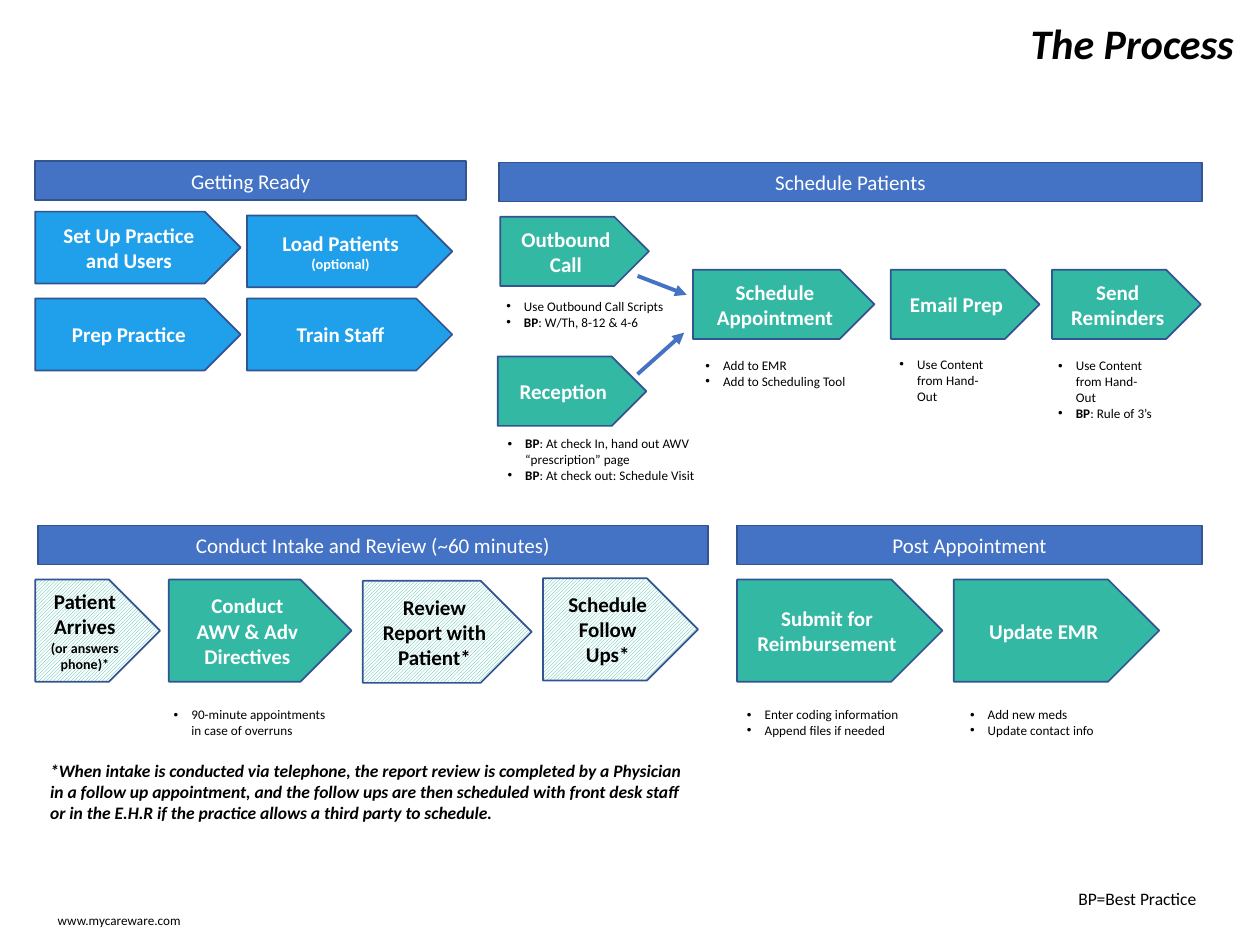
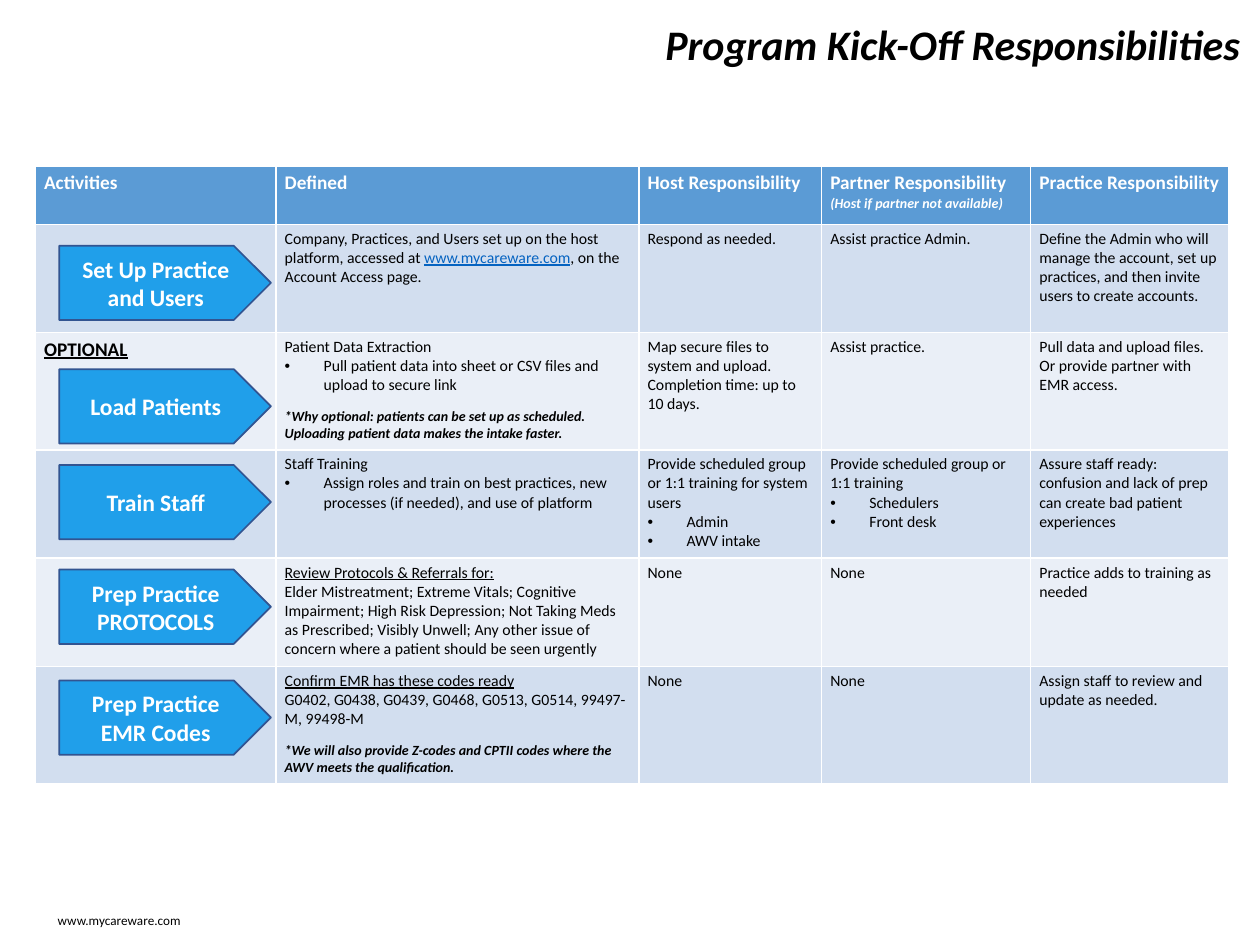
from lxml import etree
from pptx import Presentation
from pptx.dml.color import RGBColor
from pptx.enum.dml import MSO_PATTERN
from pptx.enum.shapes import MSO_CONNECTOR, MSO_SHAPE
from pptx.enum.text import MSO_ANCHOR, MSO_AUTO_SIZE, PP_ALIGN
from pptx.oxml.ns import qn
from pptx.util import Inches, Pt

PENTAGON, RECT = MSO_SHAPE.PENTAGON, MSO_SHAPE.RECTANGLE
HATCH = MSO_PATTERN.LIGHT_UPWARD_DIAGONAL
STRAIGHT = MSO_CONNECTOR.STRAIGHT
LEFT, CENTER = PP_ALIGN.LEFT, PP_ALIGN.CENTER
TOP, MIDDLE = MSO_ANCHOR.TOP, MSO_ANCHOR.MIDDLE
NO_FIT = MSO_AUTO_SIZE.NONE

THEME = {
    "font": "Calibri",
    "black": "000000", "white": "FFFFFF", "band": "4472C4", "outline": "325491",
    "ready": "209FEA", "visit": "33B8A4", "link": "0563C1",
    "header": "5B9BD5", "rows": ["D2DEEF", "EAEFF7"],
    "title": 24, "step": 12, "activity": 13.5, "note": 7.5, "remark": 10,
    "head": 11, "cell": 9, "small": 8,
}
BASE = {"name": THEME["font"], "size": THEME["cell"], "color": THEME["black"],
        "bold": False, "italic": False, "underline": False}
TITLE = BASE | {"size": THEME["title"], "bold": True, "italic": True}
BAND = BASE | {"size": THEME["step"], "color": THEME["white"]}
STEP = BAND | {"bold": True}
HATCHED = STEP | {"color": THEME["black"]}
ACTIVITY = STEP | {"size": THEME["activity"]}
FOOTER = BASE | {"size": THEME["note"]}
NOTE = FOOTER | {"indent": 0.14}
REMARK = BASE | {"size": THEME["remark"]}
HEAD = STEP | {"size": THEME["head"]}

BOLD = {"bold": True}
UNDER = {"underline": True}
ITEM = {"indent": 0.31}
ASIDE = {"size": THEME["small"], "bold": True, "italic": True, "gap": 7.3}


def write(tf, paras, base, align=LEFT, anchor=TOP, wrap=True):
    tf.word_wrap = wrap
    tf.vertical_anchor = anchor
    for i, para in enumerate(paras):
        p = tf.add_paragraph() if i else tf.paragraphs[0]
        p.alignment = align
        for part in para if isinstance(para, list) else [para]:
            text, extra = part if isinstance(part, tuple) else (part, {})
            style = base | extra
            r = p.add_run()
            r.text = text
            for key in ("name", "bold", "italic", "underline"):
                setattr(r.font, key, style[key])
            r.font.size = Pt(style["size"])
            r.font.color.rgb = RGBColor.from_string(style["color"])
        if "indent" in style:
            pPr = p._p.get_or_add_pPr()
            pPr.set("marL", str(Inches(style["indent"])))
            pPr.set("indent", str(-Inches(style["indent"])))
            etree.SubElement(pPr, qn("a:buFont")).set("typeface", "Arial")
            etree.SubElement(pPr, qn("a:buChar")).set("char", "•")
        if "gap" in style:
            p.space_before = Pt(style["gap"])


def add_block(s, kind, box, fill, paras, style, hatched=False):
    sp = s.shapes.add_shape(kind, *map(Inches, box))
    sp.shadow.inherit = False
    if hatched:
        sp.fill.patterned()
        sp.fill.pattern = HATCH
        sp.fill.back_color.rgb = RGBColor.from_string(THEME["white"])
    else:
        sp.fill.solid()
    sp.fill.fore_color.rgb = RGBColor.from_string(fill)
    sp.line.color.rgb = RGBColor.from_string(THEME["outline"])
    sp.line.width = Pt(1)
    write(sp.text_frame, paras, style, CENTER, MIDDLE)


prs = Presentation()
prs.slide_width, prs.slide_height = Inches(10), Inches(7.5)

slides = []
for title, box in [
    ("The Process", (8.08, 0.09, 1.83, 0.5)),
    ("Program Kick-Off Responsibilities", (5.18, 0.1, 4.82, 0.5)),
]:
    s = prs.slides.add_slide(prs.slide_layouts[5])
    sp = s.shapes.title
    sp.left, sp.top, sp.width, sp.height = map(Inches, box)
    sp.text_frame.auto_size = NO_FIT
    write(sp.text_frame, [title], TITLE, wrap=False)
    sp = s.shapes.add_textbox(*map(Inches, (0.36, 7.19, 1.32, 0.23)))
    write(sp.text_frame, ["www.mycareware.com"], FOOTER)
    slides.append(s)
process, kickoff = slides

bands = [
    (0.28, 1.28, 3.42, "Getting Ready"),
    (3.96, 1.29, 5.58, "Schedule Patients"),
    (0.3, 4.17, 5.32, "Conduct Intake and Review (~60 minutes)"),
    (5.85, 4.17, 3.69, "Post Appointment"),
]
for x, y, w, text in bands:
    add_block(process, RECT, (x, y, w, 0.31), THEME["band"], [text], BAND)

ready_steps = [
    (0.28, 1.68, ["Set Up Practice and Users"]),
    (1.96, 1.71, [["Load Patients ", ("(optional)", {"size": 8.2})]]),
    (0.28, 2.37, ["Prep Practice"]),
    (1.96, 2.37, ["Train Staff"]),
]
for x, y, paras in ready_steps:
    add_block(process, PENTAGON, (x, y, 1.63, 0.57), THEME["ready"], paras, STEP)

schedule_steps = [
    (3.97, 1.72, 1.18, "Outbound Call"),
    (3.95, 2.83, 1.18, "Reception"),
    (5.5, 2.14, 1.44, "Schedule Appointment"),
    (7.07, 2.14, 1.18, "Email Prep"),
    (8.35, 2.14, 1.18, "Send Reminders"),
]
for x, y, w, text in schedule_steps:
    add_block(process, PENTAGON, (x, y, w, 0.55), THEME["visit"], [text], STEP)

visit_steps = [
    (0.28, 4.6, 0.99, True,
     [["Patient Arrives ", ("(or answers phone)*", {"size": THEME["small"]})]]),
    (1.34, 4.6, 1.45, False, ["Conduct", "AWV & Adv Directives"]),
    (2.88, 4.61, 1.34, True, ["Review Report with Patient*"]),
    (4.31, 4.59, 1.23, True, ["Schedule Follow Ups*"]),
    (5.85, 4.6, 1.63, False, ["Submit for Reimbursement"]),
    (7.57, 4.6, 1.63, False, ["Update EMR"]),
]
for x, y, w, hatched, paras in visit_steps:
    add_block(process, PENTAGON, (x, y, w, 0.81), THEME["visit"], paras,
              HATCHED if hatched else STEP, hatched)

for ends in [(5.06, 2.19, 5.45, 2.34), (5.06, 2.97, 5.43, 2.64)]:
    cx = process.shapes.add_connector(STRAIGHT, *map(Inches, ends))
    cx.line.color.rgb = RGBColor.from_string(THEME["band"])
    cx.line.width = Pt(2.25)
    etree.SubElement(cx.line._get_or_add_ln(), qn("a:tailEnd")).set("type", "triangle")
    etree.SubElement(cx._element.spPr, qn("a:effectLst"))

BP = ("BP", BOLD)
notes = [
    (3.92, 2.32, 1.47, 0.35, ["Use Outbound Call Scripts", [BP, ": W/Th, 8-12 & 4-6"]]),
    (3.93, 3.41, 1.84, 0.48, [[BP, ": At check In, hand out AWV “prescription” page"],
                              [BP, ": At check out: Schedule Visit"]]),
    (5.5, 2.79, 1.44, 0.35, ["Add to EMR", "Add to Scheduling Tool"]),
    (7.04, 2.78, 0.98, 0.48, ["Use Content from Hand-Out"]),
    (8.3, 2.79, 0.98, 0.61, ["Use Content from Hand-Out", [BP, ": Rule of 3’s"]]),
    (1.28, 5.56, 1.49, 0.35, ["90-minute appointments in case of overruns"]),
    (5.83, 5.56, 1.49, 0.48, ["Enter coding information", "Append files if needed"]),
    (7.6, 5.56, 2.01, 0.35, ["Add new meds", "Update contact info"]),
]
for *box, paras in notes:
    sp = process.shapes.add_textbox(*map(Inches, box))
    write(sp.text_frame, paras, NOTE)

sp = process.shapes.add_textbox(*map(Inches, (0.3, 5.98, 5.32, 0.61)))
write(sp.text_frame, [
    "*When intake is conducted via telephone, the report review is completed by a "
    "Physician in a follow up appointment, and the follow ups are then scheduled with "
    "front desk staff or in the E.H.R if the practice allows a third party to schedule."
], REMARK | {"bold": True, "italic": True})
sp = process.shapes.add_textbox(*map(Inches, (8.46, 7, 1.16, 0.27)))
write(sp.text_frame, ["BP=Best Practice"], REMARK, wrap=False)

col_widths = [1.91, 2.88, 1.45, 1.66, 1.57]
row_heights = [0.46, 0.86, 0.93, 0.86, 0.86, 0.93]
rows = [
    [["Activities"], ["Defined"], ["Host Responsibility"],
     ["Partner Responsibility",
      ("(Host if partner not available)", {"size": THEME["small"], "italic": True})],
     ["Practice Responsibility"]],
    [[],
     [["Company, Practices, and Users set up on the host platform, accessed at ",
       ("www.mycareware.com", UNDER | {"color": THEME["link"]}),
       ", on the Account Access page."]],
     ["Respond as needed."],
     ["Assist practice Admin."],
     ["Define the Admin who will manage the account, set up practices, and then "
      "invite users to create accounts."]],
    [[("OPTIONAL", BOLD | UNDER | {"size": THEME["head"]})],
     ["Patient Data Extraction",
      ("Pull patient data into sheet or CSV files and upload to secure link", ITEM),
      ("*Why optional: patients can be set up as scheduled. Uploading patient data "
       "makes the intake faster.", ASIDE)],
     ["Map secure files to system and upload. Completion time: up to 10 days."],
     ["Assist practice."],
     ["Pull data and upload files. Or provide partner with EMR access."]],
    [[],
     ["Staff Training",
      ("Assign roles and train on best practices, new processes (if needed), and use "
       "of platform", ITEM)],
     ["Provide scheduled group or 1:1 training for system users",
      ("Admin", ITEM), ("AWV intake", ITEM)],
     ["Provide scheduled group or 1:1 training",
      ("Schedulers", ITEM), ("Front desk", ITEM)],
     ["Assure staff ready: confusion and lack of prep can create bad patient experiences"]],
    [[],
     [("Review Protocols & Referrals for:", UNDER),
      "Elder Mistreatment; Extreme Vitals; Cognitive Impairment; High Risk Depression; "
      "Not Taking Meds as Prescribed; Visibly Unwell; Any other issue of concern where "
      "a patient should be seen urgently"],
     ["None"], ["None"],
     ["Practice adds to training as needed"]],
    [[],
     [("Confirm EMR has these codes ready", UNDER),
      "G0402, G0438, G0439, G0468, G0513, G0514, 99497-M, 99498-M",
      ("*We will also provide Z-codes and CPTII codes where the AWV meets the "
       "qualification.", ASIDE)],
     ["None"], ["None"],
     ["Assign staff to review and update as needed."]],
]
table = kickoff.shapes.add_table(
    len(rows), len(col_widths), *map(Inches, (0.28, 1.32, 9.47, 4.9))).table
for col, width in zip(table.columns, col_widths):
    col.width = Inches(width)
for i, (cells, height) in enumerate(zip(rows, row_heights)):
    table.rows[i].height = Inches(height)
    fill = THEME["rows"][(i - 1) % 2] if i else THEME["header"]
    for j, paras in enumerate(cells):
        cell = table.cell(i, j)
        cell.fill.solid()
        cell.fill.fore_color.rgb = RGBColor.from_string(fill)
        cell.margin_left = cell.margin_right = Inches(0.07)
        cell.margin_top = cell.margin_bottom = Inches(0.04)
        write(cell.text_frame, paras, BASE if i else HEAD)

activities = [
    (1.95, ["Set Up Practice and Users"]),
    (2.93, ["Load Patients"]),
    (3.69, ["Train Staff"]),
    (4.52, ["Prep Practice", "PROTOCOLS"]),
    (5.4, ["Prep Practice", "EMR Codes"]),
]
for y, paras in activities:
    add_block(kickoff, PENTAGON, (0.47, y, 1.68, 0.59), THEME["ready"], paras, ACTIVITY)

prs.save("out.pptx")
